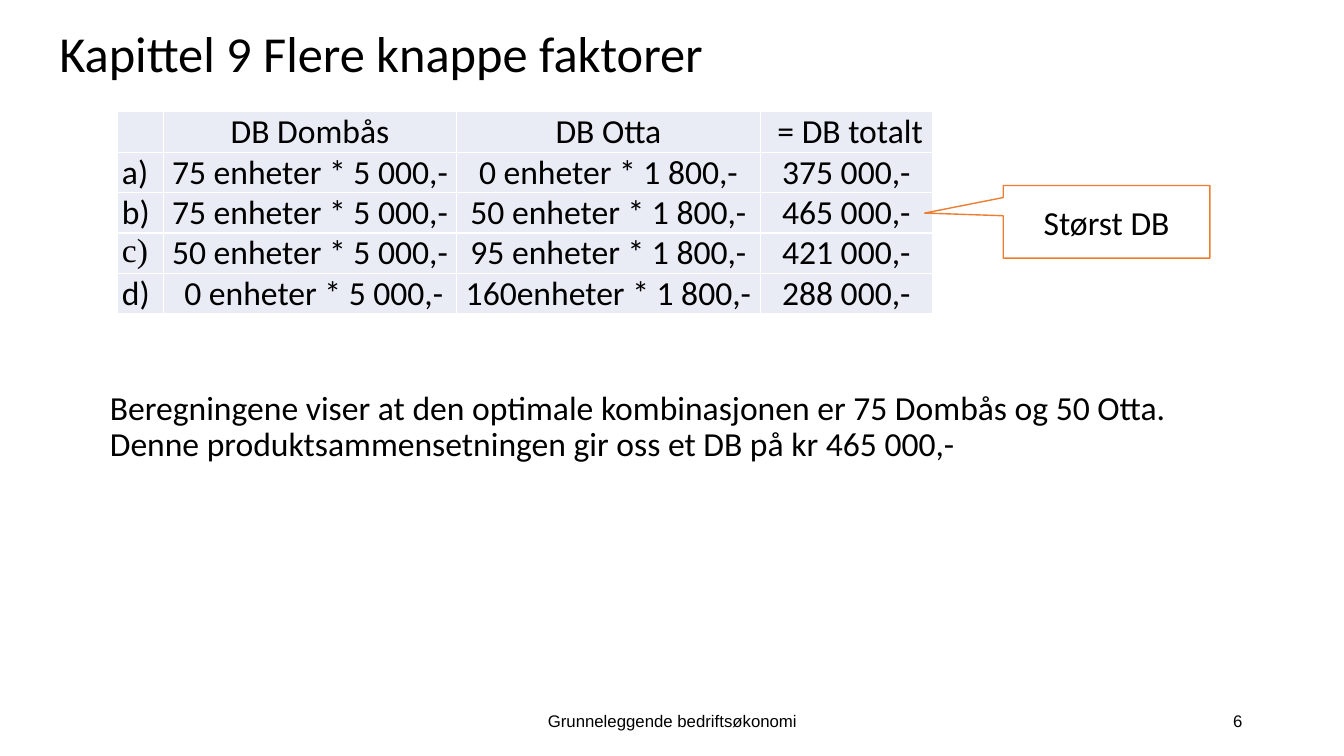
"""Build a slide comparing contribution margins for four product combinations."""
from lxml.etree import SubElement
from pptx import Presentation
from pptx.dml.color import RGBColor
from pptx.enum.shapes import MSO_SHAPE as Shape
from pptx.enum.text import MSO_ANCHOR as Anchor, PP_ALIGN as Align
from pptx.oxml.ns import qn
from pptx.util import Inches, Pt


def color(value):
    return RGBColor.from_string(value)


def write(text_frame, text, size=24, font="Calibri", align=Align.LEFT):
    text_frame.word_wrap = True
    text_frame.text = text
    paragraph = text_frame.paragraphs[0]
    paragraph.alignment = align
    for run in paragraph.runs:
        run.font.size = Pt(size)
        run.font.name = font
        run.font.color.rgb = color("000000")
    return paragraph


presentation = Presentation()
presentation.slide_width = Inches(13.33)
presentation.slide_height = Inches(7.5)
slide = presentation.slides.add_slide(presentation.slide_layouts[6])

title = slide.shapes.add_textbox(Inches(0.49), Inches(0), Inches(9), Inches(1.11))
title.text_frame.vertical_anchor = Anchor.MIDDLE
write(title.text_frame, "Kapittel 9 Flere knappe faktorer", 36).line_spacing = 0.9

conclusion = slide.shapes.add_textbox(Inches(0.49), Inches(3.83), Inches(11.7), Inches(3.12))
conclusion.text_frame.margin_left = Inches(0.6)
paragraph = write(
    conclusion.text_frame,
    "Beregningene viser at den optimale kombinasjonen er 75 Dombås og 50 Otta. "
    "Denne produktsammensetningen gir oss et DB på kr 465 000,-",
)
paragraph.line_spacing = 0.9
paragraph.space_before = Pt(5)

footers = [
    ("Grunneleggende bedriftsøkonomi", 4.42, 4.5, Align.CENTER),
    ("6", 9.42, 3, Align.RIGHT),
]
for text, left, width, align in footers:
    footer = slide.shapes.add_textbox(Inches(left), Inches(6.95), Inches(width), Inches(0.4))
    footer.text_frame.vertical_anchor = Anchor.MIDDLE
    write(footer.text_frame, text, 12, "Arial", align)

margins = [
    ["", "DB Dombås", "DB Otta", " = DB totalt"],
    ["a)", "75 enheter * 5 000,-", "0 enheter * 1 800,-", "375 000,-"],
    ["b)", "75 enheter * 5 000,-", "50 enheter * 1 800,-", "465 000,-"],
    ["c)", "50 enheter * 5 000,-", "95 enheter * 1 800,-", "421 000,-"],
    ["d)", " 0 enheter * 5 000,-", "160enheter * 1 800,-", "288 000,-"],
]
column_widths = [0.46, 2.91, 3.01, 1.71]
table = slide.shapes.add_table(
    len(margins), len(column_widths), Inches(1.16), Inches(1.11), Inches(8.09), Inches(2)
).table
for column, width in zip(table.columns, column_widths):
    column.width = Inches(width)
for row_index, row in enumerate(margins):
    for column_index, text in enumerate(row):
        cell = table.cell(row_index, column_index)
        cell.margin_left = cell.margin_right = Inches(0.05)
        cell.margin_top = cell.margin_bottom = 0
        write(
            cell.text_frame,
            text,
            font="Times New Roman" if text == "c)" else "Calibri",
            align=Align.CENTER if column_index else Align.LEFT,
        ).font.bold = False
        properties = cell._tc.get_or_add_tcPr()
        for side in ("a:lnL", "a:lnR", "a:lnT", "a:lnB"):
            border = SubElement(properties, qn(side), w=str(Pt(1)))
            border_fill = SubElement(border, qn("a:solidFill"))
            SubElement(border_fill, qn("a:srgbClr"), val="FFFFFF")
        cell.fill.solid()
        cell.fill.fore_color.rgb = color("E9EBF5")

callout = slide.shapes.add_shape(
    Shape.RECTANGULAR_CALLOUT, Inches(9.95), Inches(1.84), Inches(2.05), Inches(0.72)
)
callout.adjustments[0] = -0.88
callout.adjustments[1] = -0.12
callout.shadow.inherit = False
callout.fill.solid()
callout.fill.fore_color.rgb = color("FFFFFF")
callout.line.color.rgb = color("ED7D31")
callout.line.width = Pt(1)
callout.text_frame.vertical_anchor = Anchor.MIDDLE
write(callout.text_frame, "Størst DB", align=Align.CENTER)

presentation.save("out.pptx")
